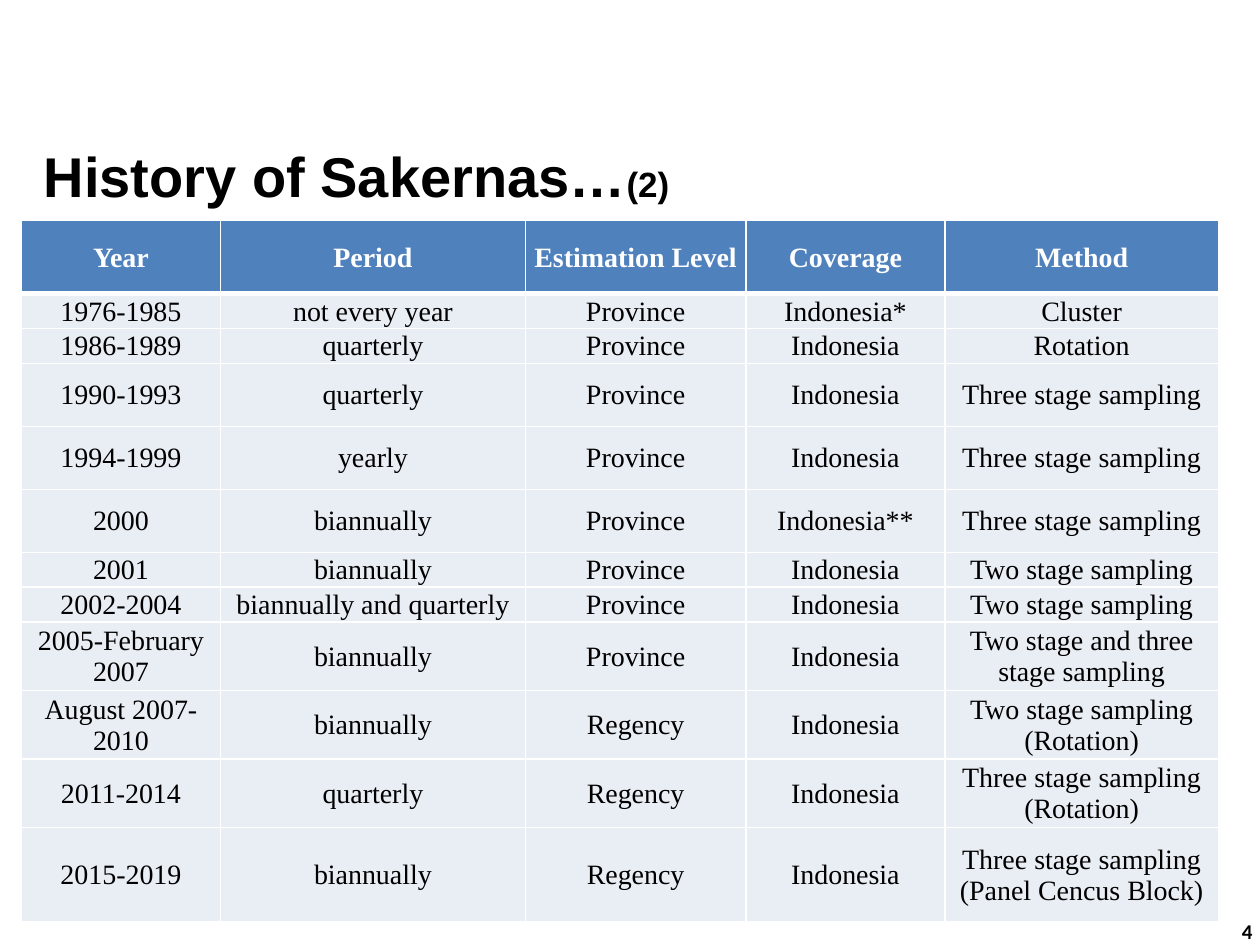
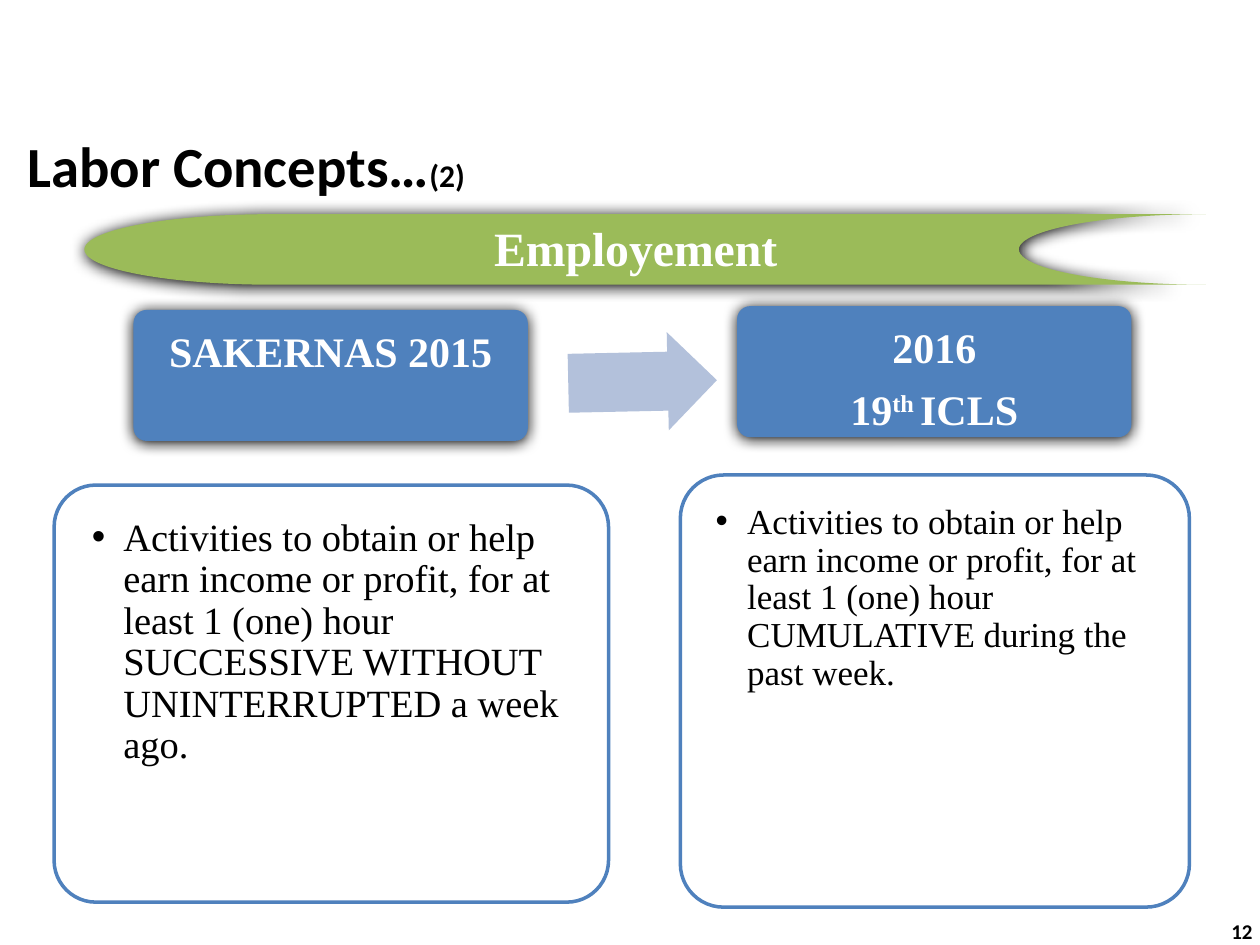
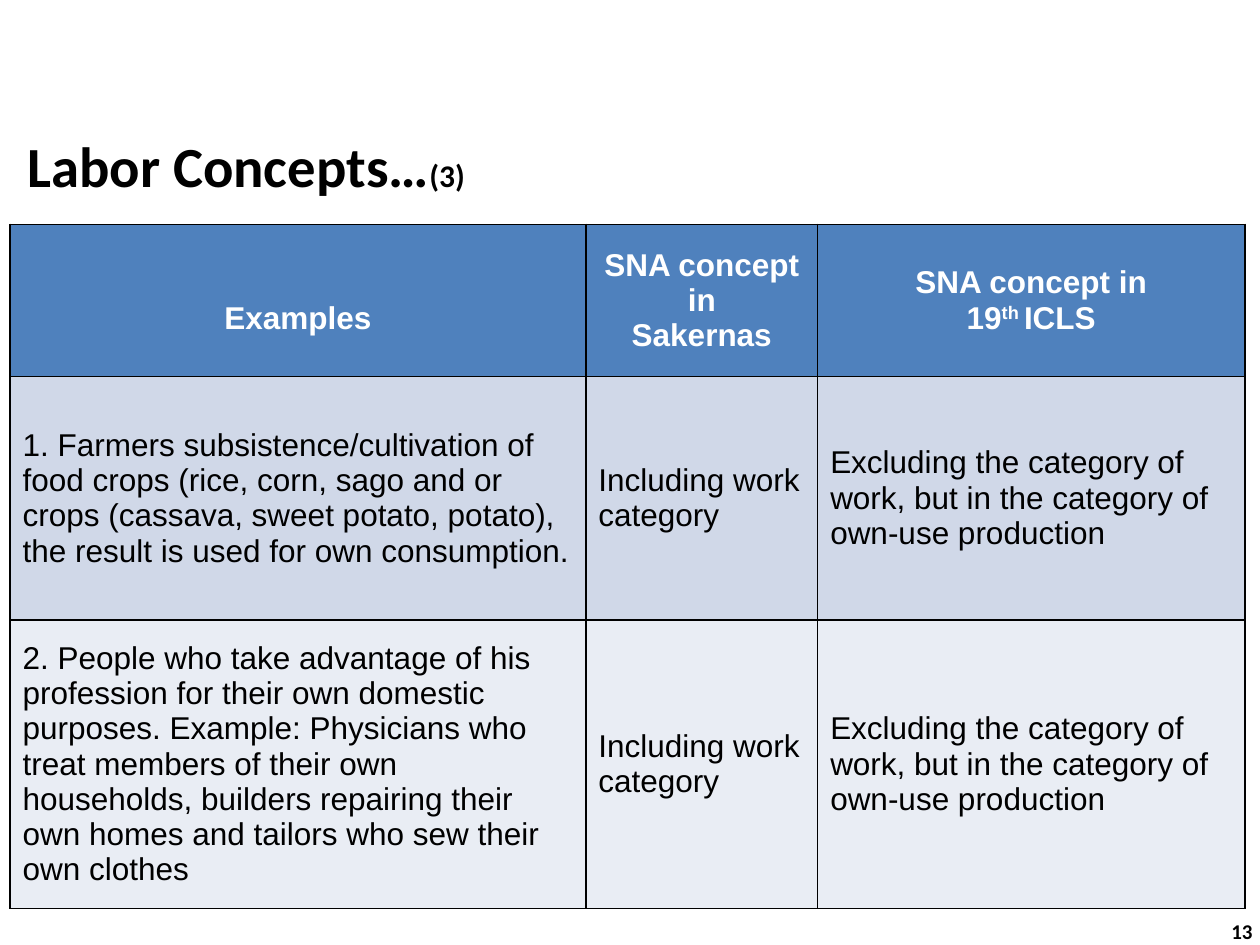
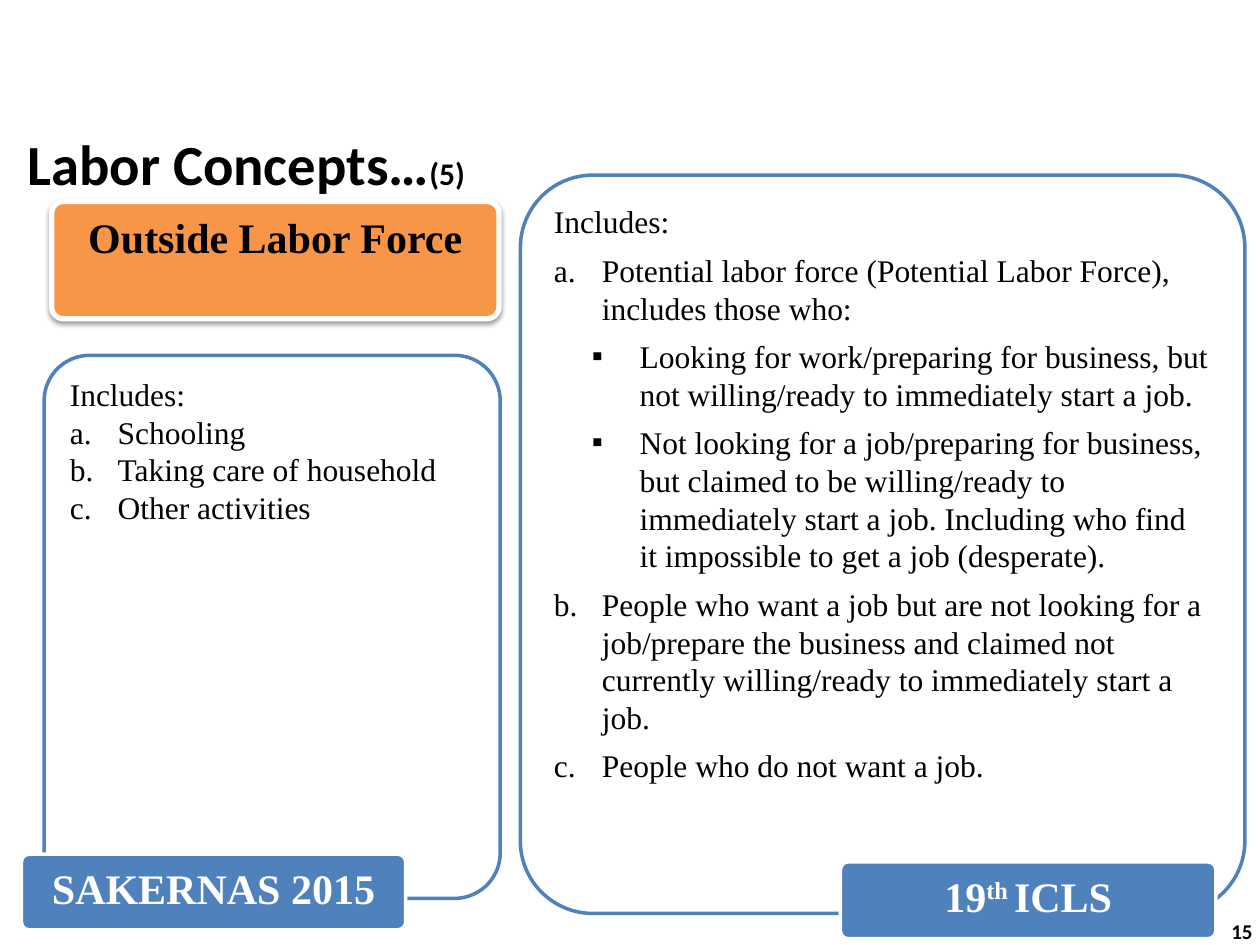
"""Build four slides on the history and labor concepts of Sakernas."""
from lxml import etree
from pptx import Presentation, util as u
from pptx.dml.color import RGBColor
from pptx.enum import shapes, text
from pptx.oxml import ns

BLUE, GREEN, ORANGE = "4F81BD", "9BBB59", "F79646"
PALE, BAND, ARROW = "E9EDF4", "D0D8E8", "B3C1DB"
WHITE, BLACK = "FFFFFF", "000000"
SERIF = "Times New Roman"
CENTER, RIGHT, LEFT = text.PP_ALIGN.CENTER, text.PP_ALIGN.RIGHT, text.PP_ALIGN.LEFT
TOP, MIDDLE = text.MSO_ANCHOR.TOP, text.MSO_ANCHOR.MIDDLE
ROUND = shapes.MSO_SHAPE.ROUNDED_RECTANGLE
GLOW = (100, 8.5, 1)
SIDES = ("margin_left", "margin_top", "margin_right", "margin_bottom")
color = RGBColor.from_string


def draw(page, kind, at, fill=None, line=None, alpha=None, shadow=None, adjust=(0.1,)):
    """Add a preset shape, or a text box when kind is None."""
    place = [u.Inches(length) for length in at]
    if kind is None:
        return page.shapes.add_textbox(*place)
    box = page.shapes.add_shape(kind, *place)
    for index in range(len(box.adjustments)):
        box.adjustments[index] = adjust[index]
    box.fill.solid()
    box.fill.fore_color.rgb = color(fill)
    if alpha:
        shade = box._element.spPr.find(".//" + ns.qn("a:srgbClr"))
        etree.SubElement(shade, ns.qn("a:alpha"), val=str(alpha * 1000))
    if line:
        box.line.color.rgb = color(line[0])
        box.line.width = u.Pt(line[1])
    else:
        box.line.fill.background()
    box.shadow.inherit = False
    if shadow:
        opacity, blur, distance = shadow
        effects = box._element.spPr.find(ns.qn("a:effectLst"))
        outer = etree.SubElement(effects, ns.qn("a:outerShdw"), blurRad=str(u.Pt(blur)),
                                 dist=str(u.Pt(distance)), dir="5400000", rotWithShape="0")
        shade = etree.SubElement(outer, ns.qn("a:srgbClr"), val=BLACK)
        etree.SubElement(shade, ns.qn("a:alpha"), val=str(opacity * 1000))
    return box


def write(holder, lines, name, size, ink=BLACK, bold=False, align=LEFT, anchor=TOP,
          margins=(0.1, 0.05, 0.1, 0.05), spacing=None, before=0, after=0):
    """Fill a shape or table cell; a line is (spans, bullet, left indent, hanging indent)."""
    frame = holder.text_frame
    host = holder if hasattr(holder, "vertical_anchor") else frame
    if host is frame:
        frame.word_wrap = True
    host.vertical_anchor = anchor
    for side, margin in zip(SIDES, margins):
        setattr(host, side, u.Inches(margin))
    for number, line in enumerate(lines):
        spans, bullet, indent, hanging = line if isinstance(line, tuple) else (line, None, 0, 0)
        para = frame.add_paragraph() if number else frame.paragraphs[0]
        if bullet:
            props = para._p.get_or_add_pPr()
            props.set("marL", str(u.Inches(indent)))
            props.set("indent", str(-u.Inches(hanging)))
            if isinstance(bullet, int):
                etree.SubElement(props, ns.qn("a:buAutoNum"), type="alphaLcPeriod",
                                 startAt=str(bullet))
            else:
                etree.SubElement(props, ns.qn("a:buFont"), typeface="Arial")
                etree.SubElement(props, ns.qn("a:buChar"), char=bullet)
        layout = {"alignment": align, "line_spacing": spacing, "space_after": u.Pt(after),
                  "space_before": u.Pt(before if number else 0)}
        for key, value in layout.items():
            setattr(para, key, value)
        for words, change in [(spans, None)] if isinstance(spans, str) else spans:
            span = para.add_run()
            span.text = words
            raised = change == "super"
            look = {"name": name, "bold": bold,
                    "size": u.Pt(size if raised or not change else change)}
            for key, value in look.items():
                setattr(span.font, key, value)
            span.font.color.rgb = color(ink)
            if raised:
                span.font._element.set("baseline", "30000")


deck = Presentation()
deck.slide_width, deck.slide_height = u.Inches(10), u.Inches(7.5)

ICLS = [("19", None), ("th ", "super"), ("ICLS", None)]

headings = [
    ("4", "History of Sakernas…", "(2)", (0.25, 1.08, 9.06, 0.62), "Arial", 32, 20),
    ("12", "Labor Concepts…", "(2)", (0.12, 1, 9.06, 0.62), "Calibri", 32.4, 18),
    ("13", "Labor Concepts…", "(3)", (0.12, 1, 9.06, 0.62), "Calibri", 32.4, 18),
    ("15", "Labor Concepts…", "(5)", (0.12, 1, 4.83, 0.59), "Calibri", 32.4, 18),
]
pages = []
for number, title, part, at, font, size, part_size in headings:
    page = deck.slides.add_slide(deck.slide_layouts[6])
    write(draw(page, None, at), [[(title, None), (part, part_size)]], font, size,
          bold=True, anchor=MIDDLE)
    write(draw(page, None, (7.71, 7.19, 2.33, 0.4)), [number], "Calibri", 12,
          bold=True, align=RIGHT, anchor=MIDDLE)
    pages.append(page)
history, employment, examples, outside = pages

surveys = [
    ("Year", "Period", "Estimation Level", "Coverage", "Method"),
    ("1976-1985", "not every year", "Province", "Indonesia*", "Cluster"),
    ("1986-1989", "quarterly", "Province", "Indonesia", "Rotation"),
    ("1990-1993", "quarterly", "Province", "Indonesia", "Three stage sampling"),
    ("1994-1999", "yearly", "Province", "Indonesia", "Three stage sampling"),
    ("2000", "biannually", "Province", "Indonesia**", "Three stage sampling"),
    ("2001", "biannually", "Province", "Indonesia", "Two stage sampling"),
    ("2002-2004", "biannually and quarterly", "Province", "Indonesia", "Two stage sampling"),
    ("2005-February 2007", "biannually", "Province", "Indonesia",
     "Two stage and three stage sampling"),
    ("August 2007-2010", "biannually", "Regency", "Indonesia", "Two stage sampling (Rotation)"),
    ("2011-2014", "quarterly", "Regency", "Indonesia", "Three stage sampling (Rotation)"),
    ("2015-2019", "biannually", "Regency", "Indonesia",
     "Three stage sampling (Panel Cencus Block)"),
]
verdicts = ("Including work category",
            "Excluding the category of work, but in the category of own-use production")
concepts = [
    ("Examples", ["SNA concept in", "Sakernas"], ["SNA concept in", ICLS]),
    ("1. Farmers subsistence/cultivation of food crops (rice, corn, sago and or crops "
     "(cassava, sweet potato, potato), the result is used for own consumption.", *verdicts),
    ("2. People who take advantage of his profession for their own domestic purposes. "
     "Example: Physicians who treat members of their own households, builders repairing "
     "their own homes and tailors who sew their own clothes", *verdicts),
]
tables = [
    (history, surveys, (0.17, 1.75, 9.5, 5.58), (1.58, 2.42, 1.75, 1.58, 2.17),
     (0.58, 0.27, 0.27, 0.5, 0.5, 0.5, 0.27, 0.27, 0.51, 0.51, 0.51, 0.75),
     (PALE, PALE), WHITE, 3, SERIF, 16, CENTER, (0.01, 0.01, 0.01, 0)),
    (examples, concepts, (0.08, 1.78, 9.8, 5.43), (4.57, 1.84, 3.39), (1.21, 1.93, 2.29),
     (PALE, BAND), BLACK, 1, "Arial", 18, LEFT, (0.1, 0.05, 0.1, 0.05)),
]
for page, data, at, widths, heights, bands, rule, head_rule, font, size, align, margins in tables:
    place = [u.Inches(length) for length in at]
    table = page.shapes.add_table(len(data), len(widths), *place).table
    for column, width in zip(table.columns, widths):
        column.width = u.Inches(width)
    for row, height in zip(table.rows, heights):
        row.height = u.Inches(height)
    for r, record in enumerate(data):
        for c, entry in enumerate(record):
            cell = table.cell(r, c)
            head = r == 0
            pads = (0.1, 0.34, 0.1, 0.05) if entry == "Examples" else margins
            write(cell, entry if isinstance(entry, list) else [entry], font, size,
                  WHITE if head else BLACK, head, CENTER if head else align, MIDDLE, pads)
            props = cell._tc.get_or_add_tcPr()
            for side in "LRTB":
                heavy = (head and side == "B") or (r == 1 and side == "T")
                edge = etree.SubElement(props, ns.qn("a:ln" + side),
                                        w=str(u.Pt(head_rule if heavy else 1)))
                solid = etree.SubElement(edge, ns.qn("a:solidFill"))
                etree.SubElement(solid, ns.qn("a:srgbClr"), val=rule)
            cell.fill.solid()
            cell.fill.fore_color.rgb = color(BLUE if head else bands[r % 2])

draw(employment, shapes.MSO_SHAPE.FLOWCHART_STORED_DATA, (0.67, 1.7, 8.9, 0.56), GREEN,
     shadow=GLOW)
write(draw(employment, None, (3.44, 1.65, 3.21, 0.62)), ["Employement"], SERIF, 27.3,
      WHITE, True, CENTER, MIDDLE)
for left, top, lines in [(1.06, 2.46, ["SAKERNAS 2015"]), (5.85, 2.43, ["2016", ICLS])]:
    draw(employment, ROUND, (left, top, 3.13, 1.04), BLUE, shadow=GLOW)
    write(draw(employment, None, (left, top, 3.13, 0.69)), lines, SERIF, 24, WHITE, True,
          CENTER, margins=(0.17, 0.17, 0.17, 0.09), spacing=0.9, after=9)
arrow = draw(employment, shapes.MSO_SHAPE.RIGHT_ARROW, (4.51, 2.64, 1.18, 0.78), ARROW,
             adjust=(0.6, 0.5))
arrow.rotation = 358.8
definitions = [
    ((0.43, 3.85, 4.4, 3.31), (0.56, 3.94, 4.14, 3.13), 22, 0.17,
     "SUCCESSIVE WITHOUT UNINTERRUPTED a week ago."),
    ((5.4, 3.77, 4.04, 3.43), (5.52, 3.84, 3.81, 3.3), 20, 0.16,
     "CUMULATIVE during the past week."),
]
for panel, inner, size, margin, ending in definitions:
    draw(employment, ROUND, panel, WHITE, (BLUE, 2), alpha=90)
    words = "Activities to obtain or help earn income or profit, for at least 1 (one) hour "
    write(draw(employment, None, inner), [(words + ending, "•", 0.25, 0.25)], SERIF, size,
          margins=(margin,) * 4, spacing=0.9)

groups = [
    "Includes:",
    ("Potential labor force (Potential Labor Force), includes those who:", 1, 0.38, 0.38),
    ("Looking for work/preparing for business, but not willing/ready to immediately "
     "start a job.", "▪", 0.68, 0.38),
    ("Not looking for a job/preparing for business, but claimed to be willing/ready to "
     "immediately start a job. Including who find it impossible to get a job (desperate).",
     "▪", 0.68, 0.38),
    ("People who want a job but are not looking for a job/prepare the business and claimed "
     "not currently willing/ready to immediately start a job.", 2, 0.38, 0.38),
    ("People who do not want a job.", 2, 0.38, 0.38),
]
activities = ["Includes:"]
for activity in ("Schooling", "Taking care of household", "Other activities"):
    activities.append((activity, 1, 0.38, 0.38))
for at, lines, gap in [((4.13, 1.39, 5.75, 5.86), groups, 3),
                       ((0.35, 2.82, 3.62, 4.31), activities, 0)]:
    panel = draw(outside, ROUND, at, WHITE, (BLUE, 2), alpha=90)
    write(panel, lines, SERIF, 18, before=gap, after=gap)
labels = [
    ((0.17, 6.78, 3.05, 0.6), "SAKERNAS 2015", BLUE, 2, WHITE, None),
    ((6.67, 6.84, 2.98, 0.61), ICLS, BLUE, 2, WHITE, None),
    ((0.41, 1.6, 3.55, 0.93), "Outside Labor Force", ORANGE, 3, BLACK, (38, 3.1, 1.6)),
]
for at, words, fill, width, ink, shadow in labels:
    label = draw(outside, ROUND, at, fill, (WHITE, width), shadow=shadow)
    write(label, [words], SERIF, 24, ink, True, CENTER)

deck.save("out.pptx")
